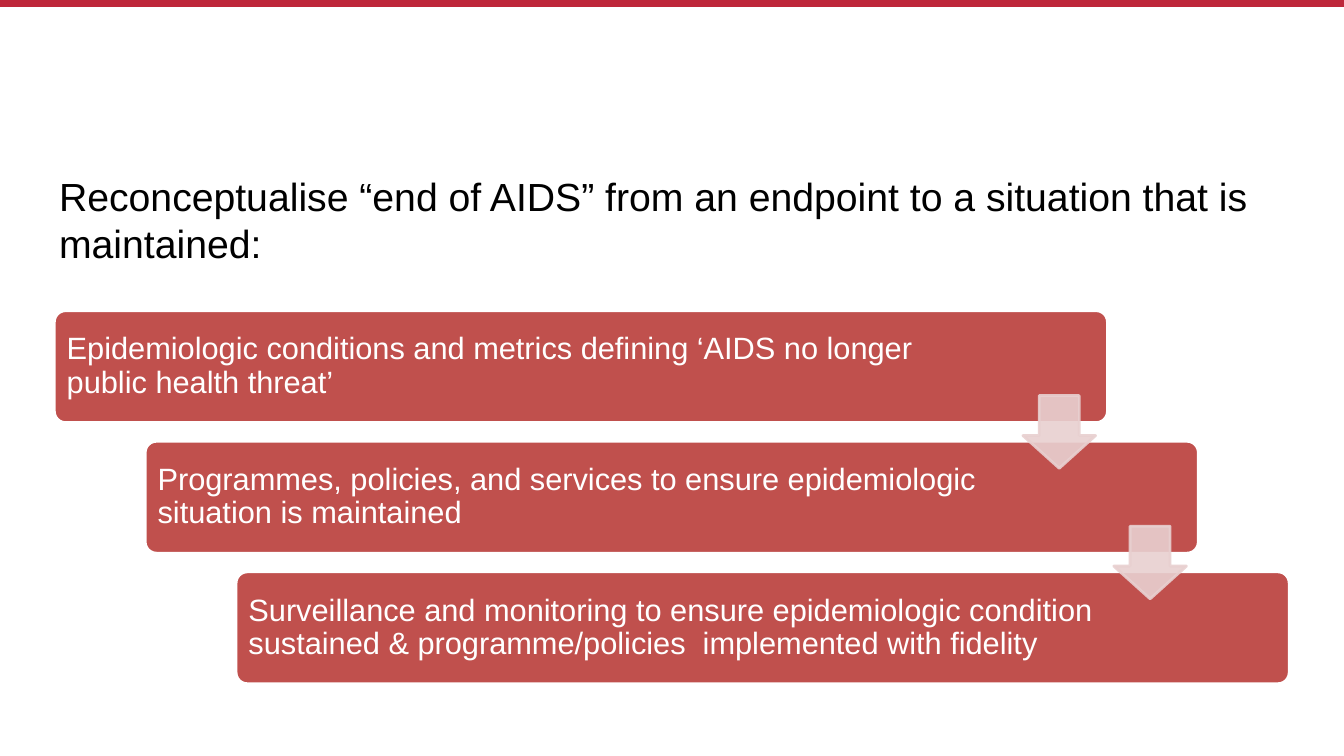
from pptx import Presentation
from pptx.dml.color import RGBColor
from pptx.enum.shapes import MSO_CONNECTOR, MSO_SHAPE
from pptx.enum.text import MSO_ANCHOR, PP_ALIGN
from pptx.oxml.ns import qn
from pptx.util import Cm, Pt
from lxml.etree import SubElement

BLACK = RGBColor(0x00, 0x00, 0x00)
WHITE = RGBColor(0xFF, 0xFF, 0xFF)
CRIMSON = RGBColor(0xBE, 0x27, 0x3A)
BRICK = RGBColor(0xC0, 0x50, 0x4D)
BLUSH = RGBColor(0xE8, 0xD0, 0xD0)

PAGE_WIDTH, PAGE_HEIGHT = 33.87, 19.05
CARD_WIDTH, CARD_HEIGHT = 26.54, 2.82
FIRST_LEFT, FIRST_TOP = 1.37, 7.83
STEP_RIGHT, STEP_DOWN = 2.29, 3.29
ARROW_SIZE = 1.83
ARROW_RIGHT, ARROW_DOWN = 24.41, 2.14  # from the corner of the card it leaves

# Each step: its text and the room kept free on the right for the arrows
STEPS = [
    ("Epidemiologic conditions and metrics defining ‘AIDS no longer "
     "public health threat’", 3.2),
    ("Programmes, policies, and services to ensure epidemiologic "
     "situation is maintained", 4.47),
    ("Surveillance and monitoring to ensure epidemiologic condition "
     "sustained & programme/policies  implemented with fidelity", 4.47),
]


def write(frame, text, *, size, color, margins, anchor=MSO_ANCHOR.TOP,
          line_spacing=1.0, space_after=0):
    """Fill a text frame with one paragraph; margins are left, top, right, bottom in cm."""
    frame.word_wrap = True
    frame.vertical_anchor = anchor
    (frame.margin_left, frame.margin_top,
     frame.margin_right, frame.margin_bottom) = map(Cm, margins)
    para = frame.paragraphs[0]
    para.alignment = PP_ALIGN.LEFT
    para.line_spacing = line_spacing
    para.space_after = Pt(space_after)
    span = para.add_run()
    span.text = text
    span.font.name = "Arial"
    span.font.size = Pt(size)
    span.font.color.rgb = color


class Slide:
    def __init__(self, page):
        self.shapes = page.shapes

    def top_rule(self):
        y = Cm(0.08)
        rule = self.shapes.add_connector(
            MSO_CONNECTOR.STRAIGHT, 0, y, Cm(PAGE_WIDTH), y)
        rule.line.color.rgb = CRIMSON
        rule.line.width = Pt(6)
        SubElement(rule._element.spPr, qn("a:effectLst"))

    def heading(self, text):
        box = self.shapes.add_textbox(Cm(1.24), Cm(4.22), Cm(30.94), Cm(13.74))
        write(box.text_frame, text, size=28, color=BLACK,
              margins=(0.25, 0.13, 0.25, 0.13), space_after=6)

    def block(self, kind, left, top, width, height, fill, line, adjustments):
        shape = self.shapes.add_shape(
            kind, Cm(left), Cm(top), Cm(width), Cm(height))
        for index, value in enumerate(adjustments):
            shape.adjustments[index] = value
        shape.shadow.inherit = False
        shape.fill.solid()
        shape.fill.fore_color.rgb = fill
        shape.line.color.rgb = line
        shape.line.width = Pt(2)
        return shape

    def card(self, left, top, text, free_right):
        card = self.block(MSO_SHAPE.ROUNDED_RECTANGLE, left, top,
                          CARD_WIDTH, CARD_HEIGHT, BRICK, WHITE, [0.1])
        write(card.text_frame, text, size=22, color=WHITE,
              margins=(0.23, 0.23, free_right, 0.23),
              anchor=MSO_ANCHOR.MIDDLE, line_spacing=0.9)

    def arrow(self, left, top):
        arrow = self.block(MSO_SHAPE.DOWN_ARROW, left, top,
                           ARROW_SIZE, ARROW_SIZE, BLUSH, BLUSH, [0.55, 0.45])
        for color in arrow._element.spPr.iter(qn("a:srgbClr")):
            SubElement(color, qn("a:alpha"), val="90000")


def main():
    deck = Presentation()
    deck.slide_width, deck.slide_height = Cm(PAGE_WIDTH), Cm(PAGE_HEIGHT)
    slide = Slide(deck.slides.add_slide(deck.slide_layouts[6]))

    slide.top_rule()
    slide.heading("Reconceptualise “end of AIDS” from an endpoint "
                  "to a situation that is maintained:")

    corners = [(FIRST_LEFT + i * STEP_RIGHT, FIRST_TOP + i * STEP_DOWN)
               for i in range(len(STEPS))]
    for (left, top), (text, free_right) in zip(corners, STEPS):
        slide.card(left, top, text, free_right)
    for left, top in corners[:-1]:
        slide.arrow(left + ARROW_RIGHT, top + ARROW_DOWN)

    deck.save("out.pptx")


if __name__ == "__main__":
    main()
